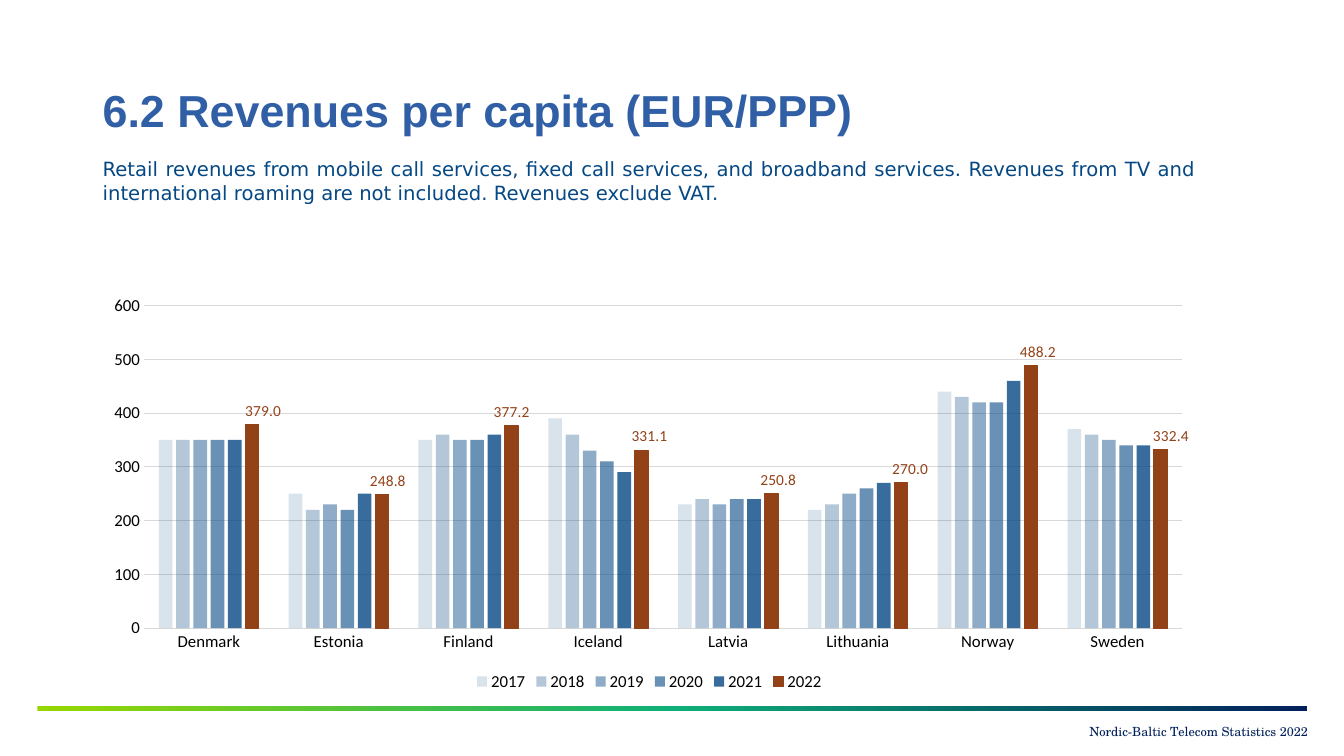
from lxml.etree import SubElement
from pptx import Presentation
from pptx.chart.data import CategoryChartData
from pptx.dml.color import RGBColor
from pptx.enum.chart import XL_CHART_TYPE, XL_LABEL_POSITION, XL_LEGEND_POSITION, XL_TICK_MARK
from pptx.enum.shapes import MSO_SHAPE
from pptx.enum.text import MSO_ANCHOR, PP_ALIGN
from pptx.oxml import parse_xml
from pptx.oxml.ns import nsdecls, qn
from pptx.util import Pt

PX = 9144  # 100 px to the inch
BLUE = RGBColor(0x05, 0x48, 0x84)
TITLE_BLUE = RGBColor(0x30, 0x5F, 0xA6)
NAVY = RGBColor(0x00, 0x20, 0x5B)
LIME = RGBColor(0x97, 0xD7, 0x00)
TEAL = RGBColor(0x0E, 0xAF, 0x78)
RUST = RGBColor(0x93, 0x42, 0x18)
GRID = RGBColor(0xD9, 0xD9, 0xD9)
BLACK = RGBColor(0, 0, 0)

COUNTRIES = ["Denmark", "Estonia", "Finland", "Iceland",
             "Latvia", "Lithuania", "Norway", "Sweden"]
REVENUES = {
    "2017": [350, 250, 350, 390, 230, 220, 440, 370],
    "2018": [350, 220, 360, 360, 240, 230, 430, 360],
    "2019": [350, 230, 350, 330, 230, 250, 420, 350],
    "2020": [350, 220, 350, 310, 240, 260, 420, 340],
    "2021": [350, 250, 360, 290, 240, 270, 460, 340],
    "2022": [379.0, 248.8, 377.2, 331.1, 250.8, 270.0, 488.2, 332.4],
}
OPACITY = {"2017": 15, "2018": 30, "2019": 45, "2020": 60, "2021": 80}
LABEL_SHIFT = {0: 11, 1: 6, 3: 8, 4: 7, 5: 9, 6: 7, 7: 10}  # px to the right


def set_font(font, name, size, color, bold=False):
    for key, value in {"name": name, "size": Pt(size), "bold": bold}.items():
        setattr(font, key, value)
    font.color.rgb = color


def set_line(line, color):
    line.color.rgb = color
    line.width = Pt(0.75)


def manual_layout(**places):
    items = "".join(f'<c:{key} val="{value}"/>' for key, value in places.items())
    return parse_xml(f'<c:layout {nsdecls("c")}><c:manualLayout>{items}'
                     '</c:manualLayout></c:layout>')


class SlideBuilder:
    def __init__(self, slide):
        self.slide = slide

    def place(self, *lengths):
        return [length * PX for length in lengths]

    def gradient_bar(self, box, colors):
        bar = self.slide.shapes.add_shape(MSO_SHAPE.RECTANGLE, *self.place(*box))
        bar.shadow.inherit = False
        bar.line.fill.background()
        bar.fill.gradient()
        bar.fill.gradient_angle = 0
        stops = next(bar.fill._xPr.iter(qn("a:gsLst")))
        for stop in list(stops):
            stops.remove(stop)
        for index, color in enumerate(colors):
            position = 100000 * index // (len(colors) - 1)
            stop = SubElement(stops, qn("a:gs"), pos=str(position))
            SubElement(stop, qn("a:srgbClr"), val=str(color))

    def text(self, box, words, font, paragraph_format, **frame_format):
        frame = self.slide.shapes.add_textbox(*self.place(*box)).text_frame
        for key, value in {"word_wrap": True, **frame_format}.items():
            setattr(frame, key, value)
        paragraph = frame.paragraphs[0]
        for key, value in paragraph_format.items():
            setattr(paragraph, key, value)
        run = paragraph.add_run()
        run.text = words
        set_font(run.font, *font)

    def column_chart(self, box):
        data = CategoryChartData()
        data.categories = COUNTRIES
        for year, values in REVENUES.items():
            data.add_series(year, values)
        chart = self.slide.shapes.add_chart(
            XL_CHART_TYPE.COLUMN_CLUSTERED, *self.place(*box), data).chart
        set_font(chart.font, "Calibri", 10, BLACK)
        chart.has_title = False
        chart.has_legend = True
        chart.legend.position = XL_LEGEND_POSITION.BOTTOM
        chart.legend.include_in_layout = False
        set_font(chart.legend.font, "Calibri", 12, BLACK)
        self.axes(chart)

        plot = chart.plots[0]
        for key, value in {"gap_width": 219, "overlap": -27,
                           "vary_by_categories": False}.items():
            setattr(plot, key, value)
        for series in plot.series:
            fill = series.format.fill
            fill.solid()
            fill.fore_color.rgb = BLUE if series.name in OPACITY else RUST
            if series.name in OPACITY:
                color = next(series._element.iter(qn("a:srgbClr")))
                SubElement(color, qn("a:alpha"), val=str(OPACITY[series.name] * 1000))
            else:
                set_line(series.format.line, RUST)
                self.value_labels(series, box[2])

        # Fixed plot area inside the chart frame
        area = next(chart._chartSpace.iter(qn("c:plotArea")))
        for layout in area.findall(qn("c:layout")):
            area.remove(layout)
        area.insert(0, manual_layout(layoutTarget="inner", xMode="edge", yMode="edge",
                                     x=0.046, y=0.045, w=0.933, h=0.79))

    def axes(self, chart):
        countries, amounts = chart.category_axis, chart.value_axis
        for axis in (countries, amounts):
            axis.major_tick_mark = axis.minor_tick_mark = XL_TICK_MARK.NONE
            set_font(axis.tick_labels.font, "Calibri", 12, BLACK)
        set_line(countries.format.line, GRID)
        for key, value in {"minimum_scale": 0, "maximum_scale": 600,
                           "major_unit": 100, "has_major_gridlines": True}.items():
            setattr(amounts, key, value)
        amounts.tick_labels.number_format = "#,##0"
        amounts.tick_labels.number_format_is_linked = False
        amounts.format.line.fill.background()
        set_line(amounts.major_gridlines.format.line, GRID)

    def value_labels(self, series, chart_width):
        labels = series.data_labels
        for key, value in {"show_value": True, "number_format": "0.0",
                           "number_format_is_linked": False,
                           "position": XL_LABEL_POSITION.OUTSIDE_END}.items():
            setattr(labels, key, value)
        set_font(labels.font, "Calibri", 11, RUST)
        for index in LABEL_SHIFT:
            label = series.points[index].data_label
            set_font(label.font, "Calibri", 11, RUST)
            label.position = XL_LABEL_POSITION.OUTSIDE_END
        for label, shift in zip(series._element.iter(qn("c:dLbl")), LABEL_SHIFT.values()):
            label.insert(1, manual_layout(x=round(shift / chart_width, 4), y=0))
            label.insert(2, parse_xml(
                f'<c:numFmt {nsdecls("c")} formatCode="0.0" sourceLinked="0"/>'))


def main():
    deck = Presentation()
    deck.slide_width, deck.slide_height = 1333 * PX, 750 * PX
    builder = SlideBuilder(deck.slides.add_slide(deck.slide_layouts[6]))

    # Footer
    builder.gradient_bar((37, 700, 1259, 5), (LIME, TEAL, NAVY))
    builder.text((980, 713, 317, 30), "Nordic-Baltic Telecom Statistics 2022",
                 ("TeX Gyre Schola", 9, NAVY), {"alignment": PP_ALIGN.RIGHT},
                 vertical_anchor=MSO_ANCHOR.MIDDLE, margin_right=0,
                 margin_top=0, margin_bottom=5 * PX)

    # Heading and explanation
    builder.text((92, 40, 1150, 145), "6.2 Revenues per capita (EUR/PPP)",
                 ("Arial", 32, TITLE_BLUE, True), {"line_spacing": 0.9},
                 vertical_anchor=MSO_ANCHOR.MIDDLE)
    builder.text((92, 151, 1104, 100),
                 "Retail revenues from mobile call services, fixed call services, and "
                 "broadband services. Revenues from TV and international roaming are "
                 "not included. Revenues exclude VAT.",
                 ("DejaVu Sans", 14, BLUE), {"alignment": PP_ALIGN.JUSTIFY})

    # Revenues by country and year
    builder.column_chart((92, 285, 1104, 405))
    deck.save("out.pptx")


if __name__ == "__main__":
    main()
